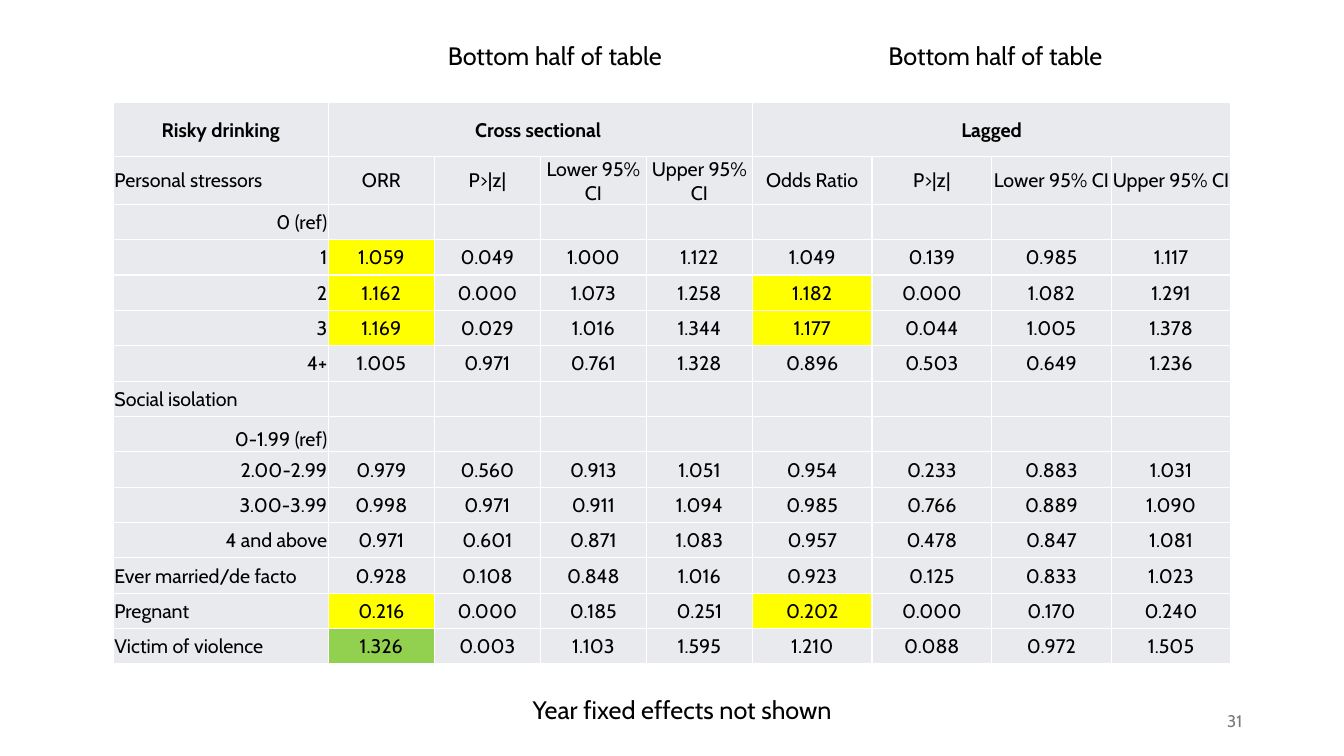
from lxml import etree
from pptx import Presentation
from pptx.dml.color import RGBColor
from pptx.enum.text import MSO_ANCHOR, PP_ALIGN
from pptx.oxml.ns import qn
from pptx.util import Inches, Pt

LEFT, MID, RIGHT = PP_ALIGN.LEFT, PP_ALIGN.CENTER, PP_ALIGN.RIGHT
TOP, CENTER, BASE = MSO_ANCHOR.TOP, MSO_ANCHOR.MIDDLE, MSO_ANCHOR.BOTTOM

BLACK = RGBColor(0x00, 0x00, 0x00)
WHITE = RGBColor(0xFF, 0xFF, 0xFF)
GREY = RGBColor(0x79, 0x79, 0x79)
PALE = RGBColor(0xE8, 0xEA, 0xED)
YELLOW = RGBColor(0xFF, 0xFF, 0x00)
GREEN = RGBColor(0x92, 0xD0, 0x50)

HEADS = ["Personal stressors",
         "ORR", "P>|z|", "Lower 95% CI", "Upper 95% CI",
         "Odds Ratio", "P>|z|", "Lower 95% CI", "Upper 95% CI"]
MODEL = [
    ("0 (ref)", ""),
    ("1", "1.059 0.049 1.000 1.122 1.049 0.139 0.985 1.117"),
    ("2", "1.162 0.000 1.073 1.258 1.182 0.000 1.082 1.291"),
    ("3", "1.169 0.029 1.016 1.344 1.177 0.044 1.005 1.378"),
    ("4+", "1.005 0.971 0.761 1.328 0.896 0.503 0.649 1.236"),
    ("Social isolation", ""),
    ("0-1.99 (ref)", ""),
    ("2.00-2.99", "0.979 0.560 0.913 1.051 0.954 0.233 0.883 1.031"),
    ("3.00-3.99", "0.998 0.971 0.911 1.094 0.985 0.766 0.889 1.090"),
    ("4 and above", "0.971 0.601 0.871 1.083 0.957 0.478 0.847 1.081"),
    ("Ever married/de facto", "0.928 0.108 0.848 1.016 0.923 0.125 0.833 1.023"),
    ("Pregnant", "0.216 0.000 0.185 0.251 0.202 0.000 0.170 0.240"),
    ("Victim of violence", "1.326 0.003 1.103 1.595 1.210 0.088 0.972 1.505"),
]
MARKS = {("1", 1): YELLOW, ("2", 1): YELLOW, ("2", 5): YELLOW,
         ("3", 1): YELLOW, ("3", 5): YELLOW,
         ("Pregnant", 1): YELLOW, ("Pregnant", 5): YELLOW,
         ("Victim of violence", 1): GREEN}
COLS = [16] + [7.89] * 4 + [8.9] * 4
ROWS = [7.07] + [4.68] * (len(MODEL) + 1)


def write(frame, text, size=14, color=BLACK, bold=False, align=MID, font="Cabin"):
    para = frame.paragraphs[0]
    para.alignment = align
    if text:
        run = para.add_run()
        run.text = text
        run.font.name = font
        run.font.size = Pt(size)
        run.font.bold = bold
        run.font.color.rgb = color


class Page:
    def __init__(self, deck):
        self.slide = deck.slides.add_slide(deck.slide_layouts[6])
        self.wide = deck.slide_width
        self.high = deck.slide_height

    def x(self, cols):
        return round(self.wide * cols / 100)

    def y(self, rows):
        return round(self.high * rows / 100)

    def label(self, text, left, top, width, anchor=TOP, **style):
        box = self.slide.shapes.add_textbox(
            self.x(left), self.y(top), self.x(width), self.y(5.33))
        box.text_frame.word_wrap = True
        box.text_frame.vertical_anchor = anchor
        write(box.text_frame, text, **style)

    def cell(self, cell, text, fill=PALE, anchor=CENTER, **style):
        cell.margin_left = cell.margin_right = self.x(0.08)
        cell.margin_top, cell.margin_bottom = self.y(0.13), 0
        cell.vertical_anchor = anchor
        cell.fill.solid()
        cell.fill.fore_color.rgb = fill
        self.edge(cell)
        write(cell.text_frame, text, **style)

    def edge(self, cell):
        props = cell._tc.get_or_add_tcPr()
        for spot, side in enumerate("LRTB"):
            line = etree.Element(qn("a:ln" + side), w=str(Pt(1)))
            paint = etree.SubElement(line, qn("a:solidFill"))
            etree.SubElement(paint, qn("a:srgbClr"), val=str(WHITE))
            props.insert(spot, line)

    def table(self, left, top, cols, rows):
        table = self.slide.shapes.add_table(
            len(rows), len(cols), self.x(left), self.y(top),
            self.x(sum(cols)), self.y(sum(rows))).table
        table.first_row = table.horz_banding = False
        for col, width in zip(table.columns, cols):
            col.width = self.x(width)
        for row, height in zip(table.rows, rows):
            row.height = self.y(height)
        return table


def main():
    deck = Presentation()
    deck.slide_width, deck.slide_height = Inches(13.33), Inches(7.5)
    page = Page(deck)

    page.label("Year fixed effects not shown", 13.05, 91.2, 75.4, size=18)
    page.label("31", 70.67, 92.67, 22.5, anchor=CENTER,
               size=12, color=GREY, align=RIGHT)
    for left in (28.96, 61.74):
        page.label("Bottom half of table ", left, 4.67, 25.06, size=18)

    table = page.table(8.43, 13.6, COLS, ROWS)
    titles = {0: "Risky drinking", 1: "Cross sectional ", 5: "Lagged"}
    for col in range(len(COLS)):
        page.cell(table.cell(0, col), titles.get(col, ""), bold=True)
        page.cell(table.cell(1, col), HEADS[col], align=MID if col else LEFT)
    for col in (1, 5):
        table.cell(0, col).merge(table.cell(0, col + 3))

    for row, (name, line) in enumerate(MODEL, 2):
        page.cell(table.cell(row, 0), name,
                  align=LEFT if name[0].isalpha() else RIGHT,
                  anchor=BASE if name == "0-1.99 (ref)" else CENTER)
        values = line.split() or [""] * 8
        for col, value in enumerate(values, 1):
            page.cell(table.cell(row, col), value,
                      fill=MARKS.get((name, col), PALE))

    deck.save("out.pptx")


if __name__ == "__main__":
    main()
